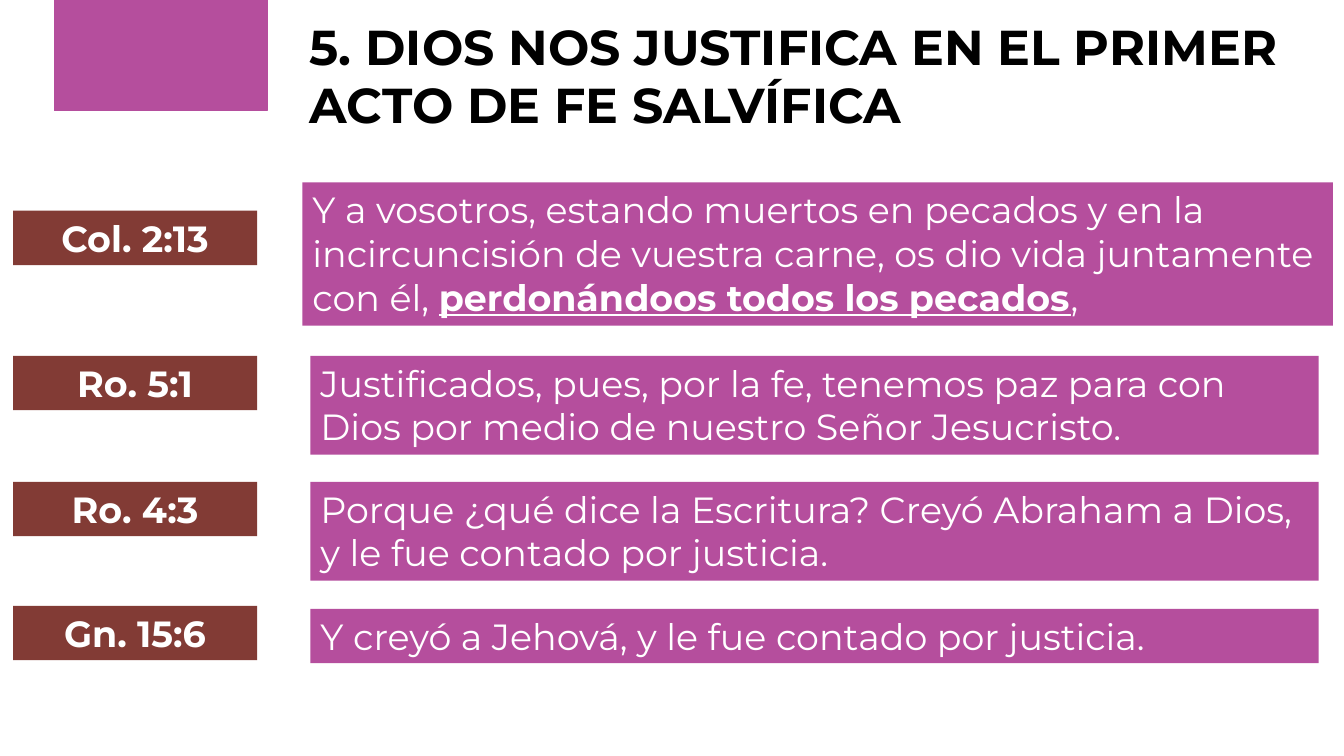
"""Build the slide on justification by faith, with four Bible verses."""
from pptx import Presentation, util as u
from pptx.dml.color import RGBColor
from pptx.enum import shapes, text

FONT = "Montserrat"
PURPLE = RGBColor(0xB5, 0x4E, 0x9D)
BROWN = RGBColor(0x82, 0x3B, 0x35)
WHITE = RGBColor(0xFF, 0xFF, 0xFF)
BLACK = RGBColor(0, 0, 0)

TITLE = "5. DIOS NOS JUSTIFICA EN EL PRIMER ACTO DE FE SALVÍFICA"
REF_LEFT, REF_WIDTH = 0.13, 2.42
VERSE_LEFT, VERSE_WIDTH = 3.08, 10
PAD, LINE = 0.1, 0.44

# Reference, its top, verse top, verse lines, widening per side, runs (text, stressed)
VERSES = [
    ("Col. 2:13", 2.09, 1.81, 3, 0.1, [
        ("Y a vosotros, estando muertos en pecados y en la incircuncisión de "
         "vuestra carne, os dio vida juntamente con él, ", False),
        ("perdonándoos todos los pecados", True),
        (",", False)]),
    ("Ro. 5:1", 3.53, 3.53, 2, 0, [
        ("Justificados, pues, por la fe, tenemos paz para con Dios por medio "
         "de nuestro Señor Jesucristo.", False)]),
    ("Ro. 4:3", 4.78, 4.78, 2, 0, [
        ("Porque ¿qué dice la Escritura? Creyó Abraham a Dios, y le fue "
         "contado por justicia.", False)]),
    ("Gn. 15:6", 6.01, 6.04, 1, 0, [
        ("Y creyó a Jehová, y le fue contado por justicia.", False)]),
]


def style(r, size, color, bold=False, underline=False):
    r.font.name, r.font.size = FONT, u.Pt(size)
    r.font.color.rgb = color
    r.font.bold, r.font.underline = bold, underline


def add_block(s, left, top, width, height, fill):
    sp = s.shapes.add_shape(shapes.MSO_SHAPE.RECTANGLE,
                            *map(u.Inches, (left, top, width, height)))
    sp.shadow.inherit = False
    sp.fill.solid()
    sp.fill.fore_color.rgb = fill
    sp.line.fill.background()
    return sp


def add_text_block(s, left, top, width, lines, fill, align, runs):
    sp = add_block(s, left, top, width, PAD + lines * LINE, fill)
    tf = sp.text_frame
    tf.word_wrap = True
    tf.vertical_anchor = text.MSO_ANCHOR.TOP
    p = tf.paragraphs[0]
    p.alignment = align
    for words, bold, underline in runs:
        r = p.add_run()
        r.text = words
        style(r, 26, WHITE, bold, underline)


def main():
    prs = Presentation()
    prs.slide_width, prs.slide_height = u.Inches(13.33), u.Inches(7.5)
    s = prs.slides.add_slide(prs.slide_layouts[5])

    sp = s.shapes.title
    sp.left, sp.top, sp.width, sp.height = map(u.Inches, (2.97, 0.11, 10.35, 1.28))
    tf = sp.text_frame
    tf.text = TITLE
    tf.word_wrap = True
    tf.auto_size = text.MSO_AUTO_SIZE.NONE
    tf.vertical_anchor = text.MSO_ANCHOR.TOP
    p = tf.paragraphs[0]
    p.alignment = text.PP_ALIGN.LEFT
    style(p.runs[0], 35, BLACK, bold=True)

    corner = add_block(s, 0.54, 0, 2.11, 1.1, PURPLE)
    corner.line.color.rgb = PURPLE
    corner.line.width = u.Pt(1)

    for ref, ref_top, top, lines, extra, runs in VERSES:
        add_text_block(s, REF_LEFT, ref_top, REF_WIDTH, 1, BROWN,
                       text.PP_ALIGN.CENTER, [(ref, True, False)])
        add_text_block(s, VERSE_LEFT - extra * 0.8, top, VERSE_WIDTH + 2.2 * extra,
                       lines, PURPLE, text.PP_ALIGN.LEFT,
                       [(words, stress, stress) for words, stress in runs])

    prs.save("out.pptx")


if __name__ == "__main__":
    main()
